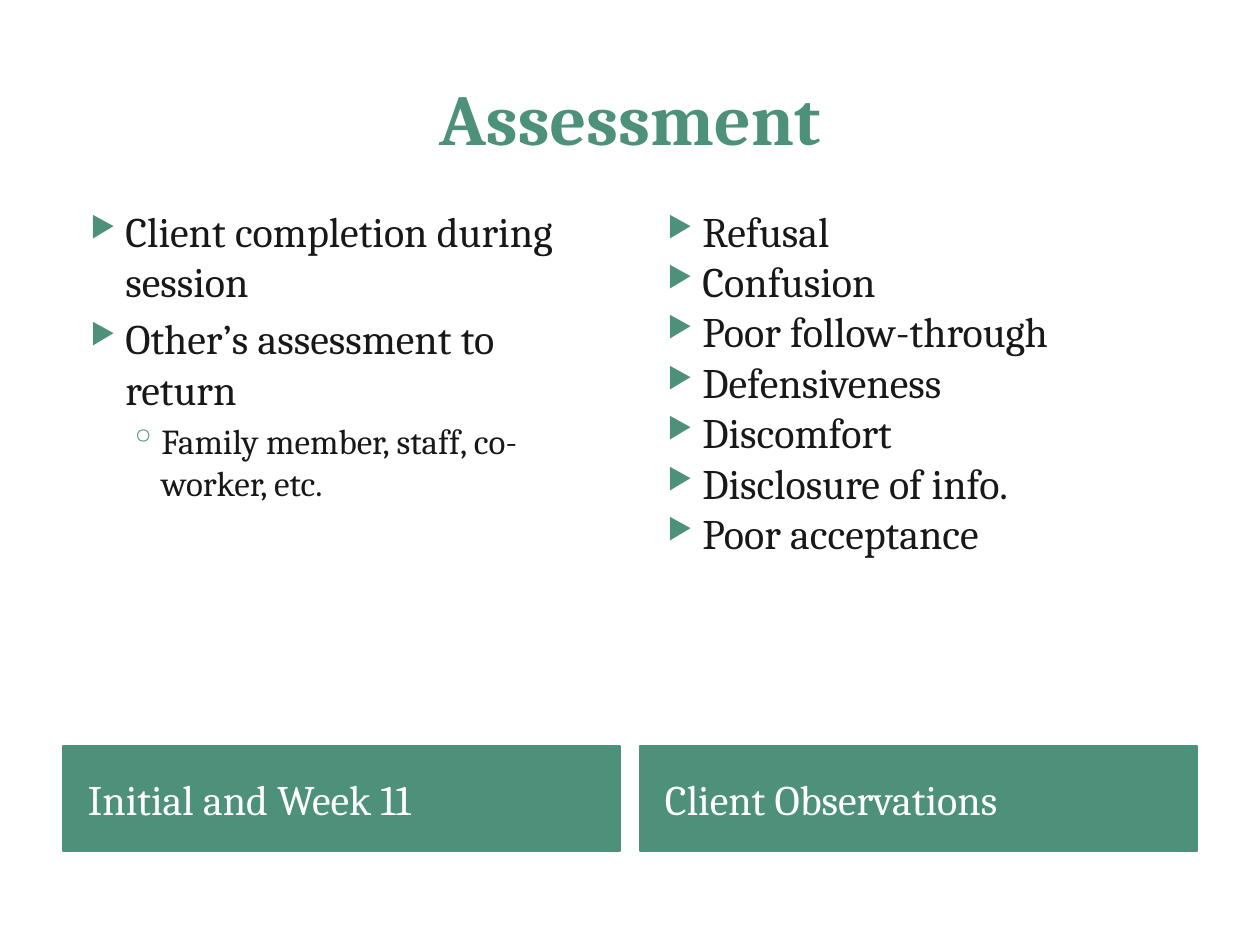
"""Build the Assessment slide: a title over two bulleted columns with banners."""
from dataclasses import dataclass
from typing import Any

from lxml import etree
from pptx import Presentation
from pptx import util as u
from pptx.dml.color import RGBColor
from pptx.enum import shapes, text
from pptx.oxml.ns import qn

PX = 914400 / 126


@dataclass(frozen=True)
class Theme:
    font: str = "Cambria"
    accent: str = "4D917B"
    ink: str = "181818"
    paper: str = "FFFFFF"
    title: int = 41
    body: int = 24
    sub: int = 20


@dataclass(frozen=True)
class Box:
    x: int
    y: int
    w: int
    h: int

    def emu(self) -> list[int]:
        return [px(v) for v in (self.x, self.y, self.w, self.h)]


@dataclass(frozen=True)
class Level:
    char: str
    percent: int
    margin: int
    indent: int
    size: int


@dataclass(frozen=True)
class Item:
    words: str
    level: int = 0
    before: float = 0


@dataclass(frozen=True)
class Column:
    x: int
    banner: str
    items: tuple[Item, ...]


THEME = Theme()
LEVELS = (Level("▶", 68, 50, -35, THEME.body), Level("◦", 100, 86, -32, THEME.sub))
COLUMN_W = 557
COLUMNS = (
    Column(63, "Initial and Week 11", (
        Item("Client completion during session"),
        Item("Other’s assessment to return", before=4),
        Item("Family member, staff, co-worker, etc.", level=1, before=3.2),
    )),
    Column(640, "Client Observations", tuple(map(Item, (
        "Refusal", "Confusion", "Poor follow-through", "Defensiveness",
        "Discomfort", "Disclosure of info.", "Poor acceptance",
    )))),
)


def px(n: int) -> int:
    return round(n * PX)


def apply(target: Any, values: dict[str, Any]) -> None:
    for name, value in values.items():
        setattr(target, name, value)


def add_run(p: Any, words: str, size: int, color: str, bold: bool = False) -> None:
    r = p.add_run()
    r.text = words
    apply(r.font, {"name": THEME.font, "size": u.Pt(size), "bold": bold})
    r.font.color.rgb = RGBColor.from_string(color)


def add_bullet(p: Any, level: Level) -> None:
    pPr = p._p.get_or_add_pPr()
    apply_attrs = {"marL": px(level.margin), "indent": px(level.indent)}
    for name, value in apply_attrs.items():
        pPr.set(name, str(value))
    color = etree.SubElement(pPr, qn("a:buClr"))
    etree.SubElement(color, qn("a:srgbClr"), val=THEME.accent)
    etree.SubElement(pPr, qn("a:buSzPct"), val=str(level.percent * 1000))
    etree.SubElement(pPr, qn("a:buChar"), char=level.char)


def add_title(s: Any, words: str, box: Box) -> None:
    tf = s.shapes.add_textbox(*box.emu()).text_frame
    apply(tf, {"word_wrap": True, "vertical_anchor": text.MSO_ANCHOR.MIDDLE})
    p = tf.paragraphs[0]
    p.alignment = text.PP_ALIGN.CENTER
    add_run(p, words, THEME.title, THEME.accent, bold=True)


def add_banner(s: Any, words: str, box: Box) -> None:
    sp = s.shapes.add_shape(shapes.MSO_SHAPE.RECTANGLE, *box.emu())
    sp.shadow.inherit = False
    for fill in (sp.fill, sp.line.fill):
        fill.solid()
        fill.fore_color.rgb = RGBColor.from_string(THEME.accent)
    sp.line.width = u.Pt(0.75)
    tf = sp.text_frame
    apply(tf, {"word_wrap": True, "margin_left": px(25),
               "vertical_anchor": text.MSO_ANCHOR.MIDDLE})
    p = tf.paragraphs[0]
    p.alignment = text.PP_ALIGN.LEFT
    add_run(p, words, THEME.body, THEME.paper)


def add_list(s: Any, items: tuple[Item, ...], box: Box) -> None:
    tf = s.shapes.add_textbox(*box.emu()).text_frame
    tf.word_wrap = True
    for i, item in enumerate(items):
        p = tf.add_paragraph() if i else tf.paragraphs[0]
        level = LEVELS[item.level]
        add_bullet(p, level)
        apply(p, {"level": item.level, "space_before": u.Pt(item.before)})
        add_run(p, item.words, level.size, THEME.ink)


def main() -> None:
    prs = Presentation()
    apply(prs, {"slide_width": px(1260), "slide_height": px(945)})
    s = prs.slides.add_slide(prs.slide_layouts[6])
    add_title(s, "Assessment", Box(63, 38, 1134, 157))
    for column in COLUMNS:
        add_banner(s, column.banner, Box(column.x, 746, COLUMN_W, 105))
        add_list(s, column.items, Box(column.x, 199, COLUMN_W, 543))
    prs.save("out.pptx")


if __name__ == "__main__":
    main()
